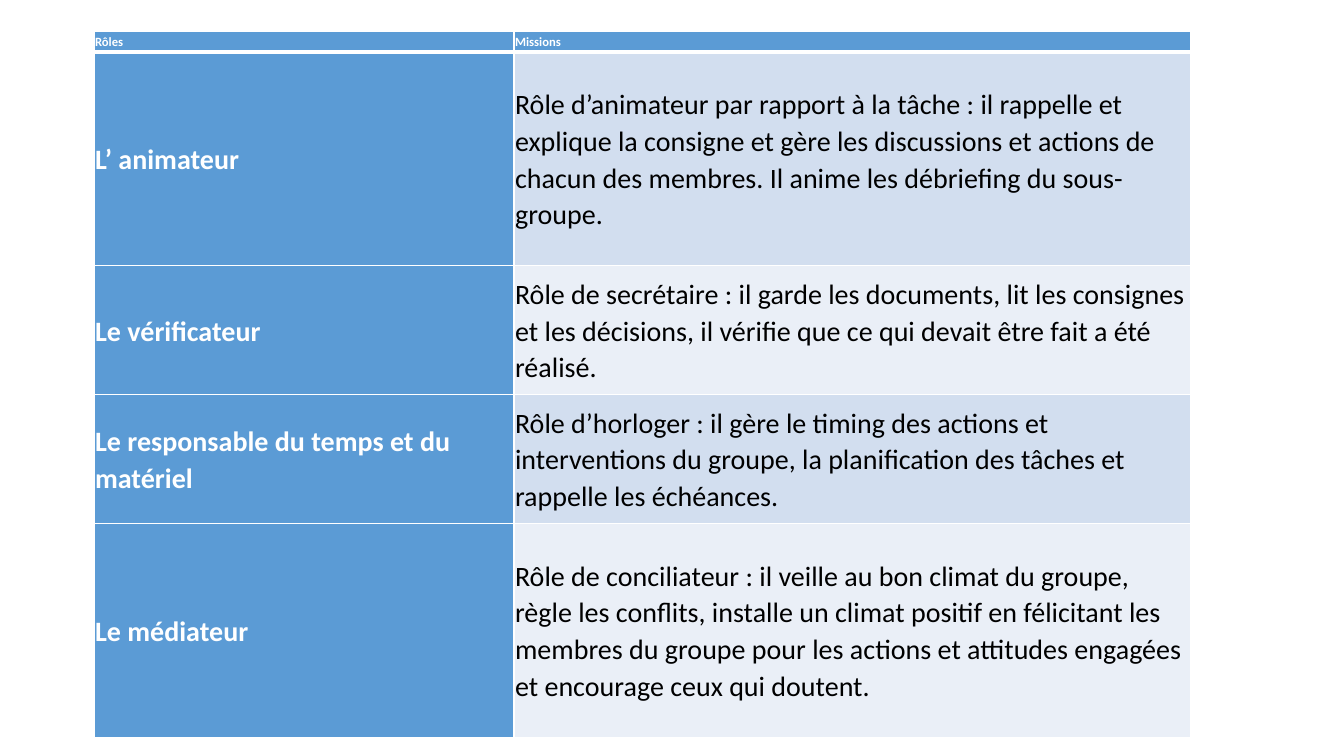
"""Build a slide with a table of group roles and their missions."""
from dataclasses import dataclass

from lxml.etree import SubElement
from pptx import Presentation
from pptx.dml.color import RGBColor
from pptx.enum.text import MSO_ANCHOR as Anchor
from pptx.oxml.ns import qn
from pptx.table import _Cell as Cell
from pptx.util import Inches, Pt

WHITE = RGBColor(0xFF, 0xFF, 0xFF)
BLACK = RGBColor(0x00, 0x00, 0x00)
BLUE = RGBColor(0x5B, 0x9B, 0xD5)
BANDS = (RGBColor(0xD2, 0xDE, 0xEF), RGBColor(0xEA, 0xEF, 0xF7))

SLIDE_WIDTH = Inches(13.333)
SLIDE_HEIGHT = Inches(7.5)
GRID_COLUMN = SLIDE_WIDTH / 320
GRID_ROW = SLIDE_HEIGHT / 180
TABLE_LEFT = 22.4
TABLE_TOP = 7.4
COLUMN_SPANS = (100, 161)
THIN, THICK = 1, 3


@dataclass(frozen=True)
class RoleRow:
    role: str
    mission: str
    span: float


HEADER = RoleRow("Rôles", "Missions", 5)
ROLES = (
    RoleRow(
        "L’ animateur",
        "Rôle d’animateur par rapport à la tâche : il rappelle et explique la consigne "
        "et gère les discussions et actions de chacun des membres. "
        "Il anime les débriefing du sous-groupe.",
        50.9,
    ),
    RoleRow(
        "Le vérificateur",
        "Rôle de secrétaire : il garde les documents, lit les consignes et les décisions, "
        "il vérifie que ce qui devait être fait a été réalisé.",
        30.7,
    ),
    RoleRow(
        "Le responsable du temps et du matériel",
        "Rôle d’horloger : il gère le timing des actions et interventions du groupe, "
        "la planification des tâches et rappelle les échéances.",
        30.7,
    ),
    RoleRow(
        "Le médiateur",
        "Rôle de conciliateur : il veille au bon climat du groupe, règle les conflits, "
        "installe un climat positif en félicitant les membres du groupe pour les actions "
        "et attitudes engagées et encourage ceux qui doutent.",
        50.9,
    ),
)


def columns(count: float) -> int:
    return round(count * GRID_COLUMN)


def rows(count: float) -> int:
    return round(count * GRID_ROW)


def add_borders(cell: Cell, top: float, bottom: float) -> None:
    properties = cell._tc.get_or_add_tcPr()
    widths = {"a:lnL": THIN, "a:lnR": THIN, "a:lnT": top, "a:lnB": bottom}
    for tag, width in widths.items():
        line = SubElement(properties, qn(tag), w=str(Pt(width)))
        fill = SubElement(line, qn("a:solidFill"))
        SubElement(fill, qn("a:srgbClr"), val=str(WHITE))


def write_text(cell: Cell, text: str, *, size: float, color: RGBColor, bold: bool) -> None:
    cell.vertical_anchor = Anchor.MIDDLE
    cell.margin_left = cell.margin_right = Inches(0.01)
    cell.margin_top = cell.margin_bottom = Inches(0.01)
    paragraph = cell.text_frame.paragraphs[0]
    paragraph.line_spacing = 1.07
    run = paragraph.add_run()
    run.text = text
    run.font.name = "Calibri"
    run.font.size = Pt(size)
    run.font.bold = bold
    run.font.color.rgb = color


def main() -> None:
    presentation = Presentation()
    presentation.slide_width = SLIDE_WIDTH
    presentation.slide_height = SLIDE_HEIGHT
    slide = presentation.slides.add_slide(presentation.slide_layouts[6])

    table_rows = (HEADER, *ROLES)
    table = slide.shapes.add_table(
        len(table_rows), len(COLUMN_SPANS),
        columns(TABLE_LEFT), rows(TABLE_TOP),
        columns(sum(COLUMN_SPANS)), rows(sum(row.span for row in table_rows)),
    ).table
    table.first_col = True
    for column, span in zip(table.columns, COLUMN_SPANS):
        column.width = columns(span)

    for row_index, row in enumerate(table_rows):
        table.rows[row_index].height = rows(row.span)
        is_header = row_index == 0
        for column_index, text in enumerate((row.role, row.mission)):
            cell = table.cell(row_index, column_index)
            strong = is_header or column_index == 0
            write_text(
                cell, text,
                size=9 if is_header else 20,
                color=WHITE if strong else BLACK,
                bold=strong,
            )
            add_borders(
                cell,
                top=THICK if row_index == 1 else THIN,
                bottom=THICK if is_header else THIN,
            )
            cell.fill.solid()
            cell.fill.fore_color.rgb = BLUE if strong else BANDS[(row_index - 1) % 2]

    presentation.save("out.pptx")


if __name__ == "__main__":
    main()
